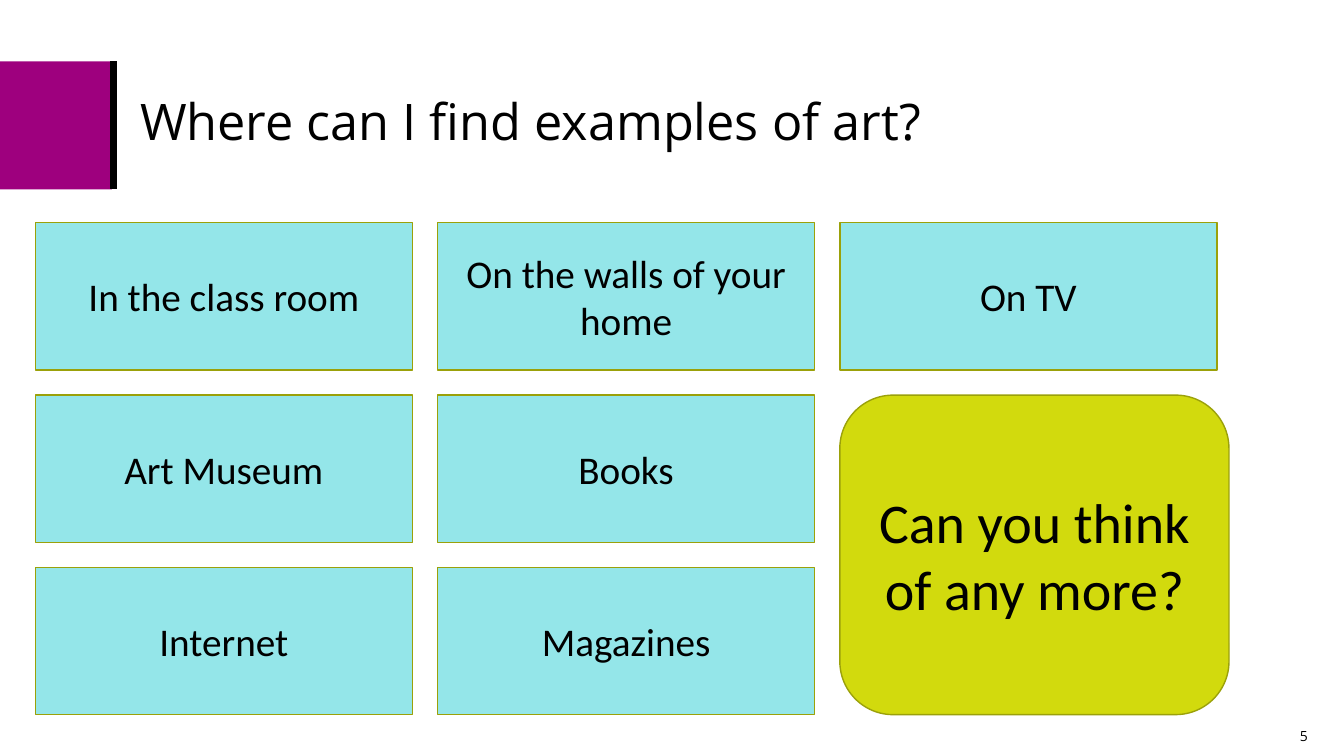
from lxml.etree import SubElement
from pptx import Presentation
from pptx.dml.color import RGBColor
from pptx.enum.shapes import MSO_CONNECTOR, MSO_SHAPE
from pptx.enum.text import MSO_ANCHOR, PP_ALIGN
from pptx.oxml.ns import qn
from pptx.util import Inches, Pt

BLACK = "000000"
MAGENTA = "9E007E"
AQUA = "94E6E9"
LIME = "D2DA0D"
OLIVE = "9BA10A"

PLACES = [
    ["In the class room", "On the walls of your home", "On TV"],
    ["Art Museum", "Books"],
    ["Internet", "Magazines"],
]


def color(value):
    return RGBColor.from_string(value)


def write_text(shape, text, size, font_name, alignment):
    frame = shape.text_frame
    frame.text = text
    frame.word_wrap = True
    frame.vertical_anchor = MSO_ANCHOR.MIDDLE
    paragraph = frame.paragraphs[0]
    paragraph.alignment = alignment
    font = paragraph.runs[0].font
    font.size = Pt(size)
    font.name = font_name
    font.color.rgb = color(BLACK)
    return paragraph


def add_panel(slide, kind, left, top, width, height, fill, line=None):
    shape = slide.shapes.add_shape(
        kind, Inches(left), Inches(top), Inches(width), Inches(height))
    shape.shadow.inherit = False
    shape.fill.solid()
    shape.fill.fore_color.rgb = color(fill)
    if line:
        shape.line.color.rgb = color(line)
        shape.line.width = Pt(1)
    else:
        shape.line.fill.background()
    return shape


def add_header(slide, left, top, width, height):
    add_panel(slide, MSO_SHAPE.RECTANGLE, left, top, 1.11, height, MAGENTA)
    bar_left = Inches(left + 1.13)
    bar = slide.shapes.add_connector(
        MSO_CONNECTOR.STRAIGHT, bar_left, Inches(top), bar_left, Inches(top + height))
    bar.line.color.rgb = color(BLACK)
    bar.line.width = Pt(5)
    SubElement(bar._element.spPr, qn("a:effectLst"))

    title = slide.shapes.title
    title.left, title.top = Inches(left + 1.29), Inches(top + 0.01)
    title.width, title.height = Inches(width - 1.29), Inches(1.22)
    paragraph = write_text(
        title, "Where can I find examples of art?", 36, "Open Sans", PP_ALIGN.LEFT)
    paragraph.line_spacing = 0.9


def add_places(slide, left, top, column_step, row_step):
    for row, names in enumerate(PLACES):
        for column, name in enumerate(names):
            card = add_panel(
                slide, MSO_SHAPE.RECTANGLE, left + column * column_step,
                top + row * row_step, 3.74, 1.46, AQUA, OLIVE)
            write_text(card, name, 28, "Calibri", PP_ALIGN.CENTER)


def add_question(slide, left, top, width, height):
    question = add_panel(
        slide, MSO_SHAPE.ROUNDED_RECTANGLE, left, top, width, height, LIME, OLIVE)
    write_text(question, "Can you think of any more?", 40, "Calibri", PP_ALIGN.CENTER)


def add_page_number(slide, left, top, width, height):
    number = slide.shapes.add_textbox(
        Inches(left), Inches(top), Inches(width), Inches(height))
    write_text(number, "5", 10, "Open Sans", PP_ALIGN.RIGHT)


def main():
    presentation = Presentation()
    presentation.slide_width = Inches(13.33)
    presentation.slide_height = Inches(7.5)
    slide = presentation.slides.add_slide(presentation.slide_layouts[5])
    add_header(slide, 0, 0.61, 12.19, 1.27)
    add_places(slide, 0.35, 2.21, 3.99, 1.71)
    add_question(slide, 8.33, 3.92, 3.86, 3.17)
    add_page_number(slide, 10.07, 7.1, 3, 0.4)
    presentation.save("out.pptx")


if __name__ == "__main__":
    main()
